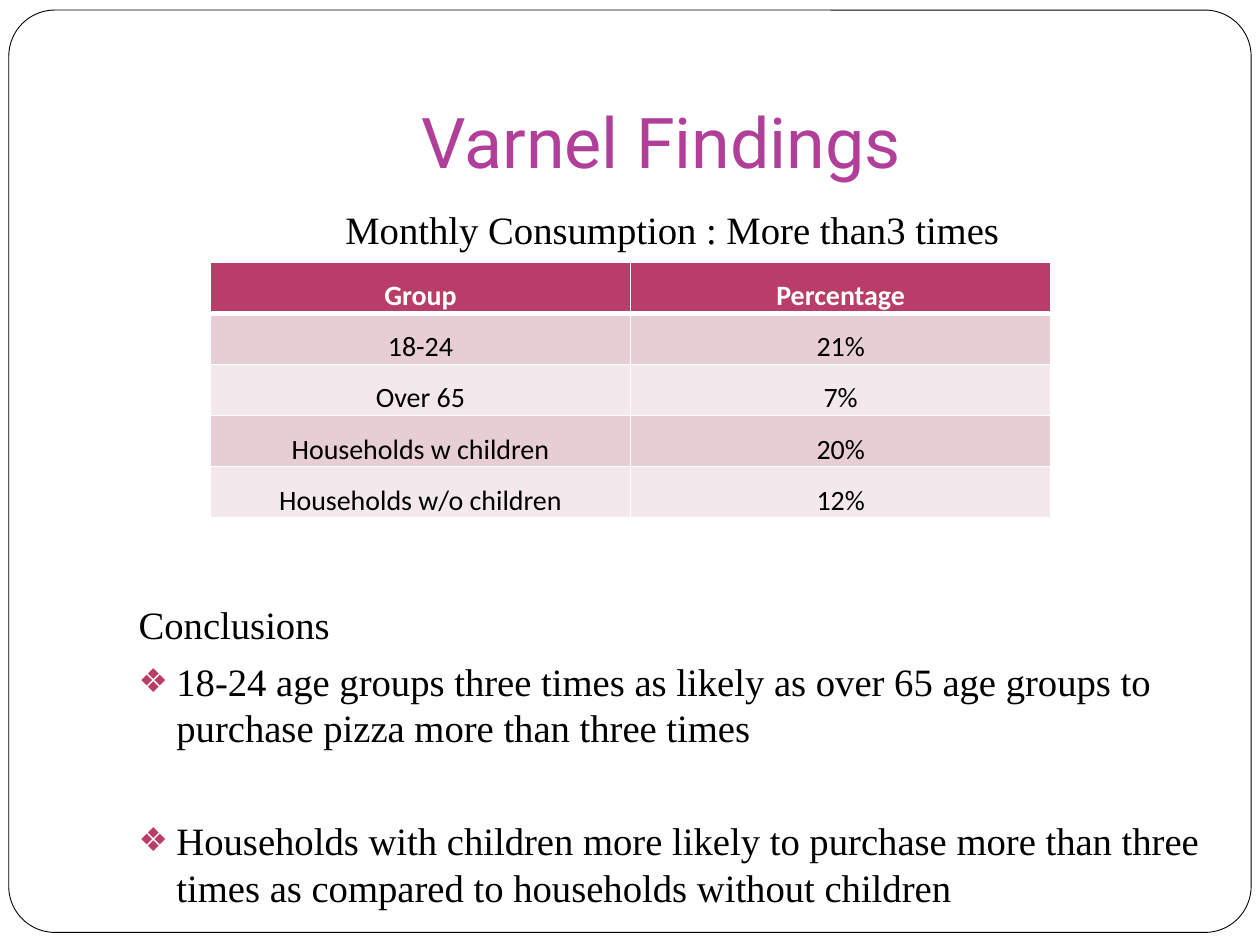
from dataclasses import dataclass

from lxml.etree import SubElement
from pptx import Presentation
from pptx.dml.color import RGBColor
from pptx.enum.shapes import MSO_SHAPE
from pptx.enum.text import MSO_ANCHOR, MSO_AUTO_SIZE, PP_ALIGN
from pptx.oxml import parse_xml
from pptx.oxml.ns import nsdecls, qn
from pptx.util import Inches, Pt


@dataclass(frozen=True)
class Theme:
    ink: str = "000000"
    paper: str = "FFFFFF"
    title: str = "B13F9A"
    accent: str = "B83D68"
    bands: tuple = ("E6CED4", "F3E8EB")
    head_font: str = "Roboto"
    body_font: str = "Times New Roman"
    cell_font: str = "Calibri"
    head_size: float = 40
    body_size: float = 22.1
    cell_size: float = 16
    line: float = 26.5
    gap: float = 5.8


THEME = Theme()
STEP = THEME.line + THEME.gap

ROWS = [
    ("Group", "Percentage"),
    ("18-24", "21%"),
    ("Over 65", "7%"),
    ("Households w children", "20%"),
    ("Households w/o children", "12%"),
]

# text, alignment, bulleted, space before in points
NOTES = [
    ("Monthly Consumption : More than3 times", PP_ALIGN.CENTER, False, 0),
    ("Conclusions", PP_ALIGN.LEFT, False, 6 * STEP + THEME.gap),
    ("18-24 age groups three times as likely as over 65 age groups to "
     "purchase pizza more than three times", PP_ALIGN.LEFT, True, THEME.gap),
    ("Households with children more likely to purchase more than three times "
     "as compared to households without children",
     PP_ALIGN.LEFT, True, STEP + THEME.gap),
]


def put(item, values):
    for name, value in values.items():
        setattr(item, name, value)


def place(shape, left, top, width, height):
    put(shape, {"left": Inches(left), "top": Inches(top),
                "width": Inches(width), "height": Inches(height)})


def style(font, name, size, color, bold=False):
    put(font, {"name": name, "size": Pt(size), "bold": bold})
    font.color.rgb = RGBColor.from_string(color)


def paint(fill, color):
    fill.solid()
    fill.fore_color.rgb = RGBColor.from_string(color)


def add_panel(slide):
    """Draw the rounded frame behind everything else."""
    panel = slide.shapes.add_shape(
        MSO_SHAPE.ROUNDED_RECTANGLE,
        Inches(0.07), Inches(0.08), Inches(9.86), Inches(7.32))
    panel.adjustments[0] = 0.05
    panel.shadow.inherit = False
    paint(panel.fill, THEME.paper)
    paint(panel.line.fill, THEME.ink)
    panel.line.width = Pt(0.5)
    panel.element.getparent().insert(2, panel.element)


def set_title(shape):
    place(shape, 1, 0.3, 8.5, 1.25)
    frame = shape.text_frame
    frame.text = "Varnel Findings"
    put(frame, {"vertical_anchor": MSO_ANCHOR.BOTTOM,
                "auto_size": MSO_AUTO_SIZE.NONE,
                "margin_bottom": Inches(0.1)})
    para = frame.paragraphs[0]
    para.alignment = PP_ALIGN.CENTER
    style(para.font, THEME.head_font, THEME.head_size, THEME.title)


def set_bullet(para, shown):
    props = para._p.get_or_add_pPr()
    props.set("marL", str(Inches(0.3)))
    props.set("indent", str(-Inches(0.3)))
    if not shown:
        SubElement(props, qn("a:buNone"))
        return
    color = SubElement(props, qn("a:buClr"))
    SubElement(color, qn("a:srgbClr"), val=THEME.accent)
    SubElement(props, qn("a:buSzPct"), val="85000")
    SubElement(props, qn("a:buChar"), char="❖")


def set_body(shape):
    place(shape, 1, 1.58, 8.67, 5)
    frame = shape.text_frame
    put(frame, {"auto_size": MSO_AUTO_SIZE.NONE,
                "vertical_anchor": MSO_ANCHOR.TOP})
    for i, (text, align, shown, before) in enumerate(NOTES):
        para = frame.add_paragraph() if i else frame.paragraphs[0]
        para.text = text
        set_bullet(para, shown)
        put(para, {"alignment": align, "line_spacing": Pt(THEME.line),
                   "space_before": Pt(before)})
        style(para.font, THEME.body_font, THEME.body_size, THEME.ink)


def set_edges(cell, widths):
    """Draw white cell borders; widths maps a side letter to points."""
    props = cell._tc.get_or_add_tcPr()
    for i, (side, width) in enumerate(widths.items()):
        props.insert(i, parse_xml(
            f'<a:ln{side} {nsdecls("a")} w="{Pt(width)}"><a:solidFill>'
            f'<a:srgbClr val="{THEME.paper}"/></a:solidFill></a:ln{side}>'))


def set_cell(cell, text, row):
    head = row == 0
    cell.text = text
    put(cell, {"vertical_anchor": MSO_ANCHOR.BOTTOM,
               "margin_left": Inches(0.01), "margin_right": Inches(0.01),
               "margin_top": Inches(0.01), "margin_bottom": 0})
    para = cell.text_frame.paragraphs[0]
    para.alignment = PP_ALIGN.CENTER
    style(para.font, THEME.cell_font, THEME.cell_size,
          THEME.paper if head else THEME.ink, head)
    paint(cell.fill, THEME.accent if head else THEME.bands[(row - 1) % 2])
    set_edges(cell, {"L": 1, "R": 1, "T": 3 if row == 1 else 1,
                     "B": 3 if head else 1})


def add_grid(slide):
    table = slide.shapes.add_table(
        len(ROWS), len(ROWS[0]), Inches(1.67), Inches(2.08),
        Inches(6.67), Inches(2.03)).table
    for r, row in enumerate(ROWS):
        for c, text in enumerate(row):
            set_cell(table.cell(r, c), text, r)


def main():
    deck = Presentation()
    put(deck, {"slide_width": Inches(10), "slide_height": Inches(7.5)})
    slide = deck.slides.add_slide(deck.slide_layouts[1])
    add_panel(slide)
    set_title(slide.shapes.title)
    set_body(slide.placeholders[1])
    add_grid(slide)
    deck.save("out.pptx")


if __name__ == "__main__":
    main()
